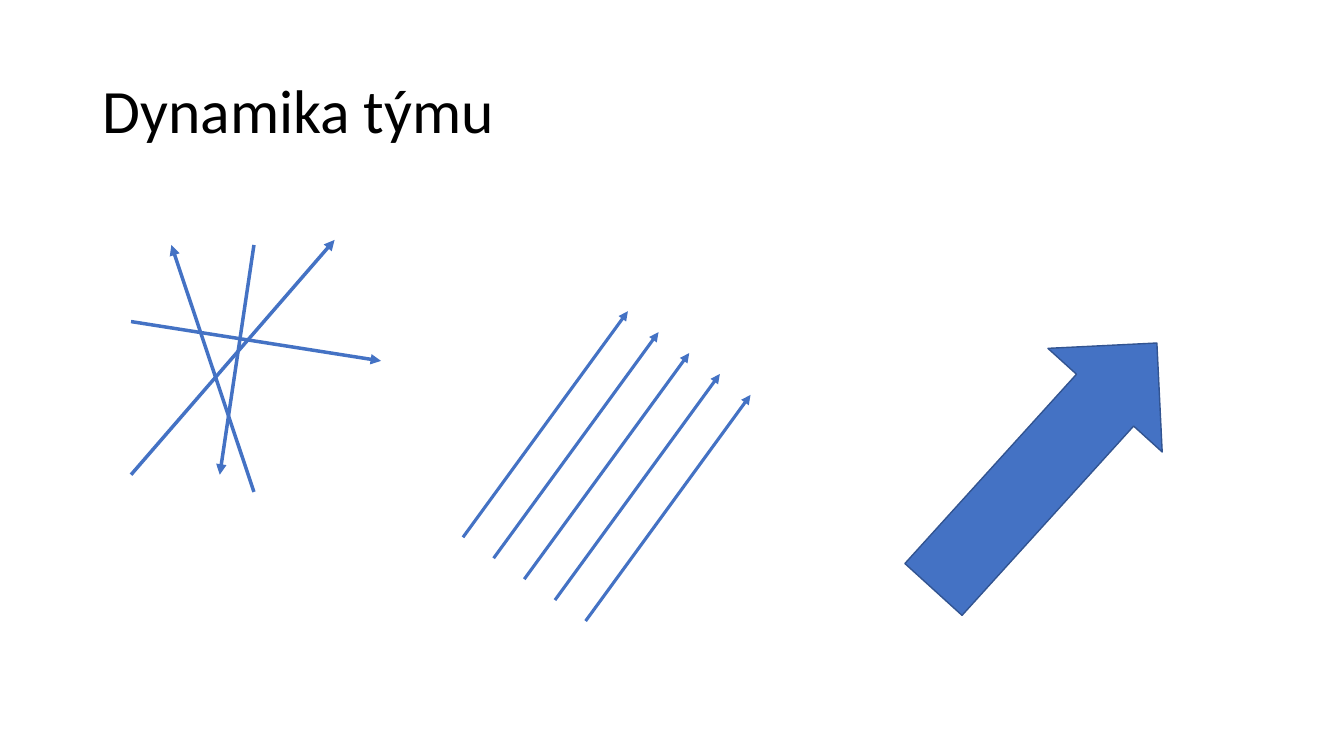
from pptx import Presentation
from pptx.dml.color import RGBColor
from pptx.enum.shapes import MSO_CONNECTOR as Link, MSO_SHAPE as Shape
from pptx.enum.text import MSO_ANCHOR as Anchor, MSO_AUTO_SIZE as Fit, PP_ALIGN as Align
from pptx.oxml.ns import qn
from pptx.util import Pt
from lxml.etree import SubElement

BLACK = RGBColor(0x00, 0x00, 0x00)
BLUE = RGBColor(0x44, 0x72, 0xC4)
NAVY = RGBColor(0x32, 0x54, 0x91)


def format_all(item, values):
    for name, value in values.items():
        setattr(item, name, value)


def add_arrow(group, start, end, width):
    arrow = group.shapes.add_connector(Link.STRAIGHT, *map(Pt, start + end))
    arrow.line.color.rgb = BLUE
    arrow.line.width = Pt(width)
    SubElement(arrow.line._get_or_add_ln(), qn("a:tailEnd"), type="triangle")
    SubElement(arrow._element.spPr, qn("a:effectLst"))


deck = Presentation()
format_all(deck, {"slide_width": Pt(960), "slide_height": Pt(540)})
slide = deck.slides.add_slide(deck.slide_layouts[5])

title = slide.shapes.title
format_all(title, {"left": Pt(66), "top": Pt(28.75), "width": Pt(828), "height": Pt(104.4)})
frame = title.text_frame
frame.text = "Dynamika týmu"
format_all(frame, {"vertical_anchor": Anchor.MIDDLE, "auto_size": Fit.NONE, "word_wrap": True})
line = frame.paragraphs[0]
format_all(line, {"alignment": Align.LEFT, "line_spacing": 0.9})
font = line.runs[0].font
format_all(font, {"name": "Calibri", "size": Pt(44)})
font.color.rgb = BLACK

chaos = slide.shapes.add_group_shape()
for start, end in [
    ((93.6, 339.1), (239, 171.4)),
    ((181.4, 351.4), (122.4, 175)),
    ((93.6, 229.7), (272.2, 257.8)),
    ((181.4, 175), (157, 339.1)),
]:
    add_arrow(chaos, start, end, 2.5)

order = slide.shapes.add_group_shape()
for step in range(5):
    x, y = 330.7 + 21.9 * step, 383.8 + 14.95 * step
    add_arrow(order, (x, y), (x + 117.8, y - 161.5), 2.25)

team = slide.shapes.add_shape(Shape.RIGHT_ARROW, Pt(627.8), Pt(277.9), Pt(237.6), Pt(110.2))
team.rotation = 312.2
team.shadow.inherit = False
team.fill.solid()
team.fill.fore_color.rgb = BLUE
team.line.color.rgb = NAVY
team.line.width = Pt(1)

deck.save("out.pptx")
